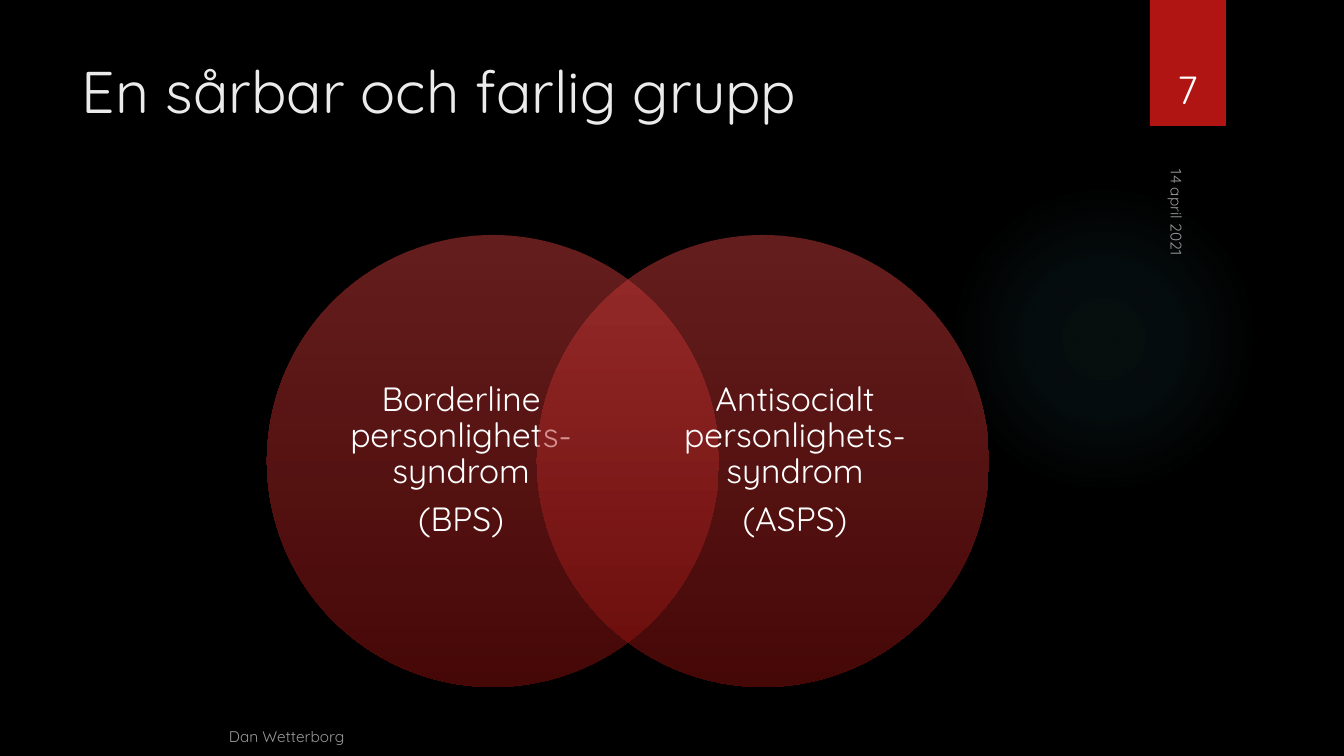
import pptx
import pptx.dml.color
import pptx.enum.shapes
import pptx.enum.text
import pptx.oxml
import pptx.oxml.ns
import pptx.util
from lxml import etree

COLORS = {
    "background": "000000",
    "glow": "50B9C1",
    "badge": "B01513",
    "title": "EBEBEB",
    "text": "FFFFFF",
    "circle_top": "C93B3A",
    "circle_bottom": "8D110F",
}
ALIGN = pptx.enum.text.PP_ALIGN
ANCHOR = pptx.enum.text.MSO_ANCHOR
SHAPE = pptx.enum.shapes.MSO_SHAPE


def px(value):
    return pptx.util.Emu(round(value * 914400 / 100.8))


def rgb(name):
    return pptx.dml.color.RGBColor.from_string(COLORS[name])


class SlideBuilder:
    font_name = "Quicksand"

    def __init__(self, presentation):
        self.slide = presentation.slides.add_slide(presentation.slide_layouts[6])
        self.slide.background.fill.solid()
        self.slide.background.fill.fore_color.rgb = rgb("background")

    def shape(self, kind, box):
        shape = self.slide.shapes.add_shape(kind, *map(px, box))
        shape.shadow.inherit = False
        shape.line.fill.background()
        return shape

    def rectangle(self, box, color):
        shape = self.shape(SHAPE.RECTANGLE, box)
        shape.fill.solid()
        shape.fill.fore_color.rgb = rgb(color)

    def gradient_circle(self, left, top, size, stops, direction):
        shape = self.shape(SHAPE.OVAL, (left, top, size, size))
        stop_list = "".join(
            f'<a:gs pos="{position * 1000}"><a:srgbClr val="{COLORS[color]}">'
            f'<a:alpha val="{alpha * 1000}"/></a:srgbClr></a:gs>'
            for position, color, alpha in stops
        )
        gradient = pptx.oxml.parse_xml(
            f'<a:gradFill {pptx.oxml.ns.nsdecls("a")} rotWithShape="1">'
            f"<a:gsLst>{stop_list}</a:gsLst>{direction}</a:gradFill>"
        )
        geometry = shape._element.spPr.find(pptx.oxml.ns.qn("a:prstGeom"))
        geometry.addnext(gradient)

    def text(self, box, lines, size, color="text", align=ALIGN.LEFT,
             anchor=ANCHOR.TOP, alpha=100, rotation=0, inset=None,
             line_spacing=None, space_after=0):
        shape = self.slide.shapes.add_textbox(*map(px, box))
        shape.rotation = rotation
        frame = shape.text_frame
        frame.word_wrap = True
        frame.vertical_anchor = anchor
        if inset is not None:
            frame.margin_left = frame.margin_right = px(inset)
            frame.margin_top = frame.margin_bottom = px(inset)
        frame.text = "\n".join(lines)
        for paragraph in frame.paragraphs:
            paragraph.alignment = align
            paragraph.line_spacing = line_spacing
            paragraph.space_after = pptx.util.Pt(space_after)
            for run in paragraph.runs:
                run.font.name = self.font_name
                run.font.size = pptx.util.Pt(size)
                run.font.color.rgb = rgb(color)
                if alpha < 100:
                    tag = pptx.oxml.ns.qn("a:srgbClr")
                    for color_element in run._r.iter(tag):
                        etree.SubElement(
                            color_element, pptx.oxml.ns.qn("a:alpha"),
                            val=str(alpha * 1000))


def main():
    presentation = pptx.Presentation()
    presentation.slide_width = px(1344)
    presentation.slide_height = px(756)
    builder = SlideBuilder(presentation)

    builder.gradient_circle(
        949, 184, 310,
        [(0, "glow", 7), (36, "glow", 6), (69, "glow", 0)],
        '<a:path path="circle"><a:fillToRect l="50000" t="50000" '
        'r="50000" b="50000"/></a:path>')
    builder.rectangle((1150, 0, 76, 126), "badge")
    builder.text((1120, 198, 109, 33), ["14 april 2021"], 11, alpha=60, rotation=90)
    builder.text((219, 714, 802, 37), ["Dan Wetterborg"], 11, alpha=60,
                 anchor=ANCHOR.BOTTOM)
    builder.text((1141, 32, 93, 85), ["7"], 28, align=ALIGN.CENTER,
                 anchor=ANCHOR.BOTTOM)
    builder.text((72, 50, 1037, 154), ["En sårbar och farlig grupp"], 42, "title")

    groups = [
        (267, 331, ["Borderline personlighets-syndrom", "(BPS)"]),
        (537, 665, ["Antisocialt personlighets-syndrom", "(ASPS)"]),
    ]
    for circle_left, text_left, lines in groups:
        builder.gradient_circle(
            circle_left, 235, 452,
            [(0, "circle_top", 50), (100, "circle_bottom", 50)],
            '<a:lin ang="5400000" scaled="0"/>')
        builder.text((text_left, 288, 260, 345), lines, 24, align=ALIGN.CENTER,
                     anchor=ANCHOR.MIDDLE, inset=0, line_spacing=0.9,
                     space_after=8.4)

    presentation.save("out.pptx")


if __name__ == "__main__":
    main()
